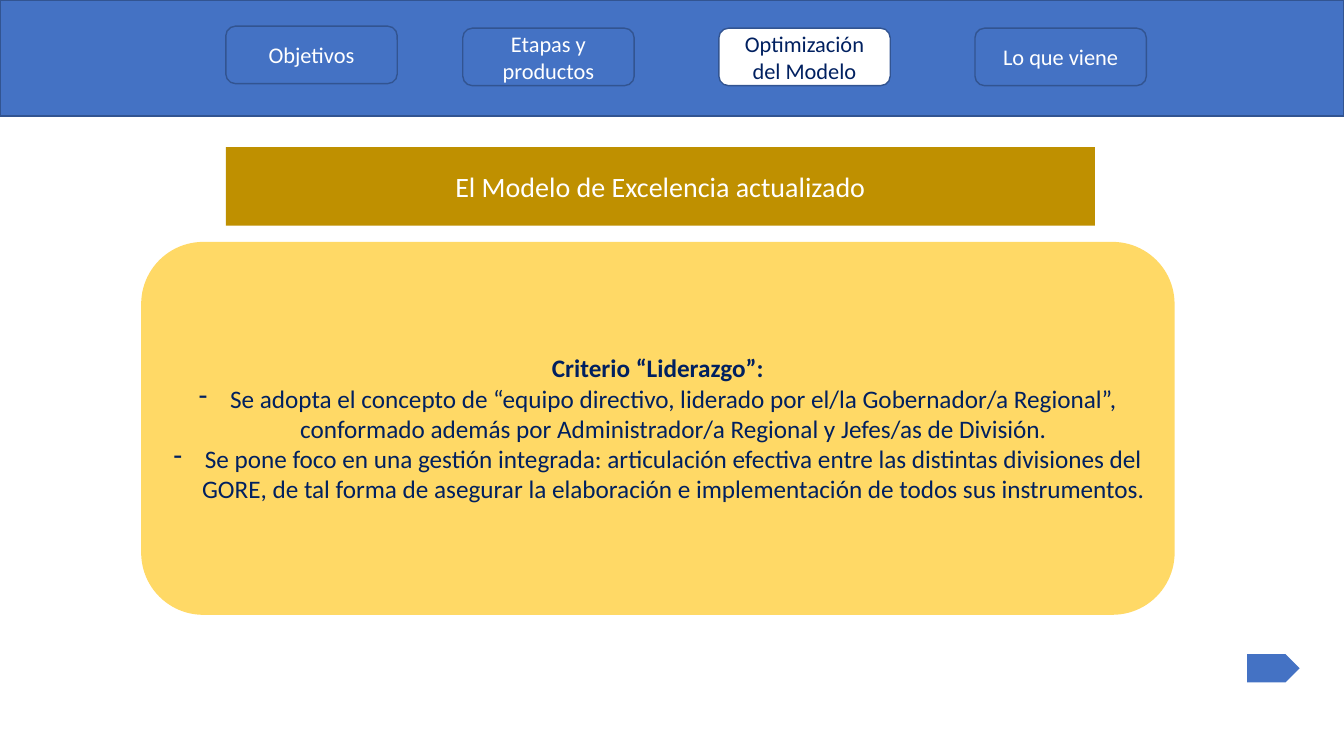
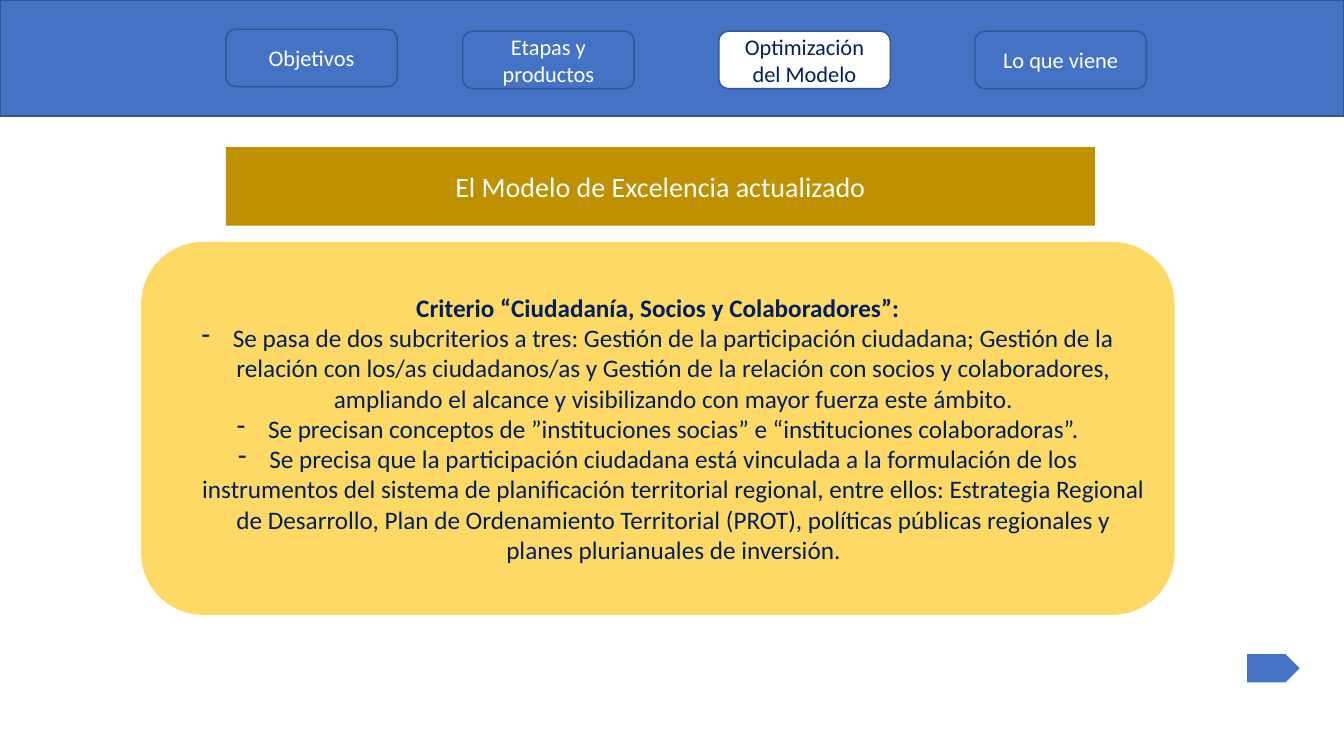
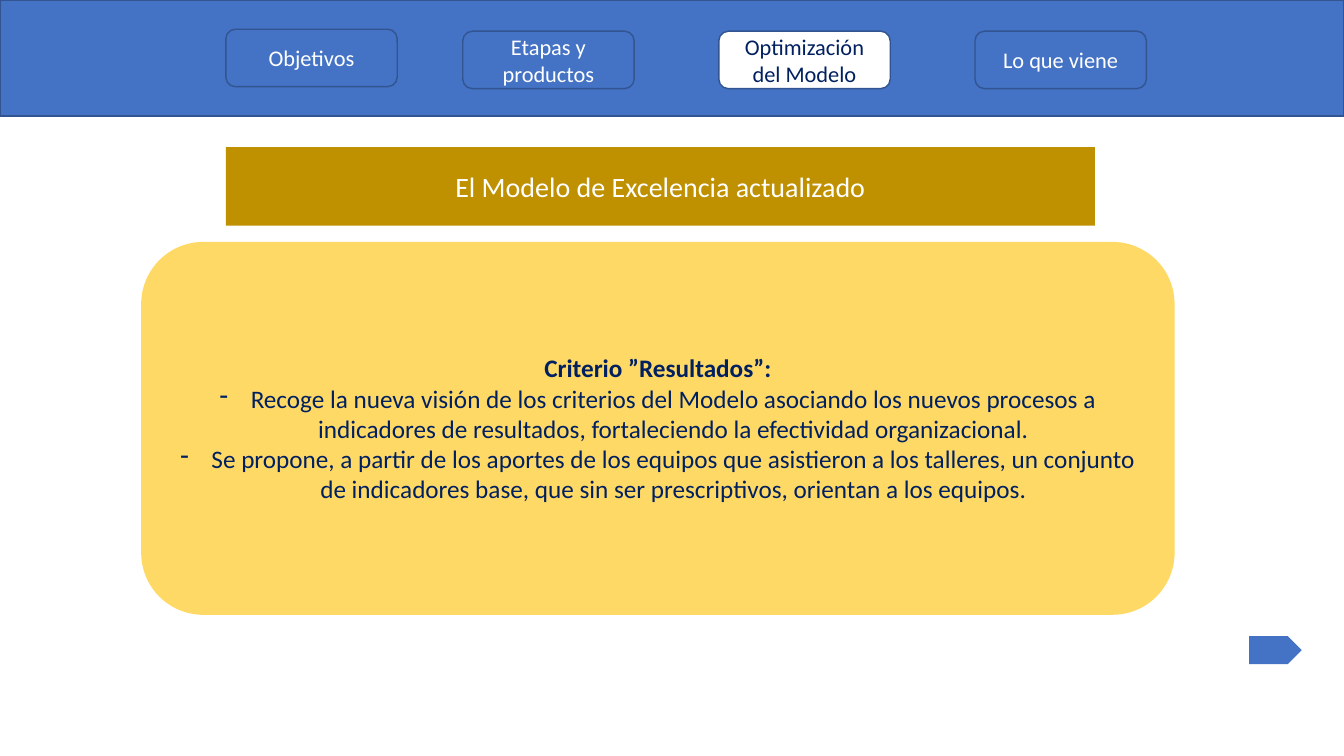
from lxml import etree
from pptx import Presentation
from pptx.dml.color import RGBColor
from pptx.enum.shapes import MSO_SHAPE as SHAPE
from pptx.enum.text import MSO_ANCHOR as ANCHOR, MSO_AUTO_SIZE as AUTO, PP_ALIGN as ALIGN
from pptx.oxml.ns import qn
from pptx.util import Inches, Pt

BLUE, EDGE, NAVY, WHITE = "4472C4", "325491", "002060", "FFFFFF"
GOLD, YELLOW = "BF9000", "FFD966"
TITLE = "El Modelo de Excelencia actualizado"
TABS = [
    ("Objetivos", 2.24, 0),
    ("Etapas y productos", 4.59, 0.02),
    ("Optimización del Modelo", 7.13, 0.02),
    ("Lo que viene", 9.67, 0.02),
]
ACTIVE = "Optimización del Modelo"
SLIDES = [
    (0.26, (12.37, 6.49), "Criterio “Liderazgo”:", [
        "Se adopta el concepto de “equipo directivo, liderado por el/la Gobernador/a Regional”, "
        "conformado además por Administrador/a Regional y Jefes/as de División.",
        "Se pone foco en una gestión integrada: articulación efectiva entre las distintas divisiones "
        "del GORE, de tal forma de asegurar la elaboración e implementación de todos sus instrumentos.",
    ]),
    (0.29, (12.37, 6.49), "Criterio “Ciudadanía, Socios y Colaboradores”:", [
        "Se pasa de dos subcriterios a tres: Gestión de la participación ciudadana; Gestión de la "
        "relación con los/as ciudadanos/as y Gestión de la relación con socios y colaboradores, "
        "ampliando el alcance y visibilizando con mayor fuerza este ámbito.",
        "Se precisan conceptos de ”instituciones socias” e “instituciones colaboradoras”.",
        "Se precisa que la participación ciudadana está vinculada a la formulación de los instrumentos "
        "del sistema de planificación territorial regional, entre ellos: Estrategia Regional de "
        "Desarrollo, Plan de Ordenamiento Territorial (PROT), políticas públicas regionales y planes "
        "plurianuales de inversión.",
    ]),
    (0.29, (12.39, 6.31), "Criterio ”Resultados”:", [
        "Recoge la nueva visión de los criterios del Modelo asociando los nuevos procesos a "
        "indicadores de resultados, fortaleciendo la efectividad organizacional.",
        "Se propone, a partir de los aportes de los equipos que asistieron a los talleres, un conjunto "
        "de indicadores base, que sin ser prescriptivos, orientan a los equipos.",
    ]),
]


def rgb(value):
    return RGBColor.from_string(value)


def add_box(s, kind, at, fill, line=None):
    sp = s.shapes.add_shape(kind, *map(Inches, at))
    sp.shadow.inherit = False
    sp.fill.solid()
    sp.fill.fore_color.rgb = rgb(fill)
    if line:
        sp.line.color.rgb = rgb(line)
        sp.line.width = Pt(1)
    else:
        sp.line.fill.background()
    return sp


prs = Presentation()
prs.slide_width, prs.slide_height = Inches(13.33), Inches(7.5)
layout = prs.slide_layouts[5]
for ph in list(layout.placeholders)[1:]:
    ph.element.getparent().remove(ph.element)
slides = [prs.slides.add_slide(layout) for _ in SLIDES]

band = add_box(slides[0], SHAPE.RECTANGLE, (0, 0, 13.33, 1.15), BLUE, EDGE)
layout.shapes.element.insert(2, band.element)

for s, (tab_top, arrow_at, heading, points) in zip(slides, SLIDES):
    title = s.shapes.title
    for name, value in dict(left=2.24, top=1.46, width=8.62, height=0.78).items():
        setattr(title, name, Inches(value))
    geom = etree.SubElement(title.element.spPr, qn("a:prstGeom"), prst="roundRect")
    etree.SubElement(geom, qn("a:avLst"))
    title.fill.solid()
    title.fill.fore_color.rgb = rgb(GOLD)

    panel = add_box(s, SHAPE.ROUNDED_RECTANGLE, (1.4, 2.4, 10.25, 3.7), YELLOW)
    add_box(s, SHAPE.PENTAGON, (*arrow_at, 0.52, 0.28), BLUE)
    texts = [(title, [TITLE], 20, WHITE), (panel, [heading, *points], 18, NAVY)]
    for label, x, drop in TABS:
        fill, color = (WHITE, NAVY) if label == ACTIVE else (BLUE, WHITE)
        tab = add_box(s, SHAPE.ROUNDED_RECTANGLE, (x, tab_top + drop, 1.7, 0.57), fill, EDGE)
        texts.append((tab, [label], 16, color))

    for sp, lines, size, color in texts:
        tf = sp.text_frame
        frame_format = dict(word_wrap=True, auto_size=AUTO.NONE, vertical_anchor=ANCHOR.MIDDLE)
        for name, value in frame_format.items():
            setattr(tf, name, value)
        for i, line in enumerate(lines):
            p = tf.add_paragraph() if i else tf.paragraphs[0]
            p.alignment = ALIGN.CENTER
            if i:
                pPr = p._p.get_or_add_pPr()
                pPr.set("marL", str(Inches(0.31)))
                pPr.set("indent", str(-Inches(0.31)))
                etree.SubElement(pPr, qn("a:buChar"), char="-")
            r = p.add_run()
            r.text = line
            bold = sp is panel and i == 0
            for name, value in dict(name="Calibri", size=Pt(size), bold=bold).items():
                setattr(r.font, name, value)
            r.font.color.rgb = rgb(color)

prs.save("out.pptx")
